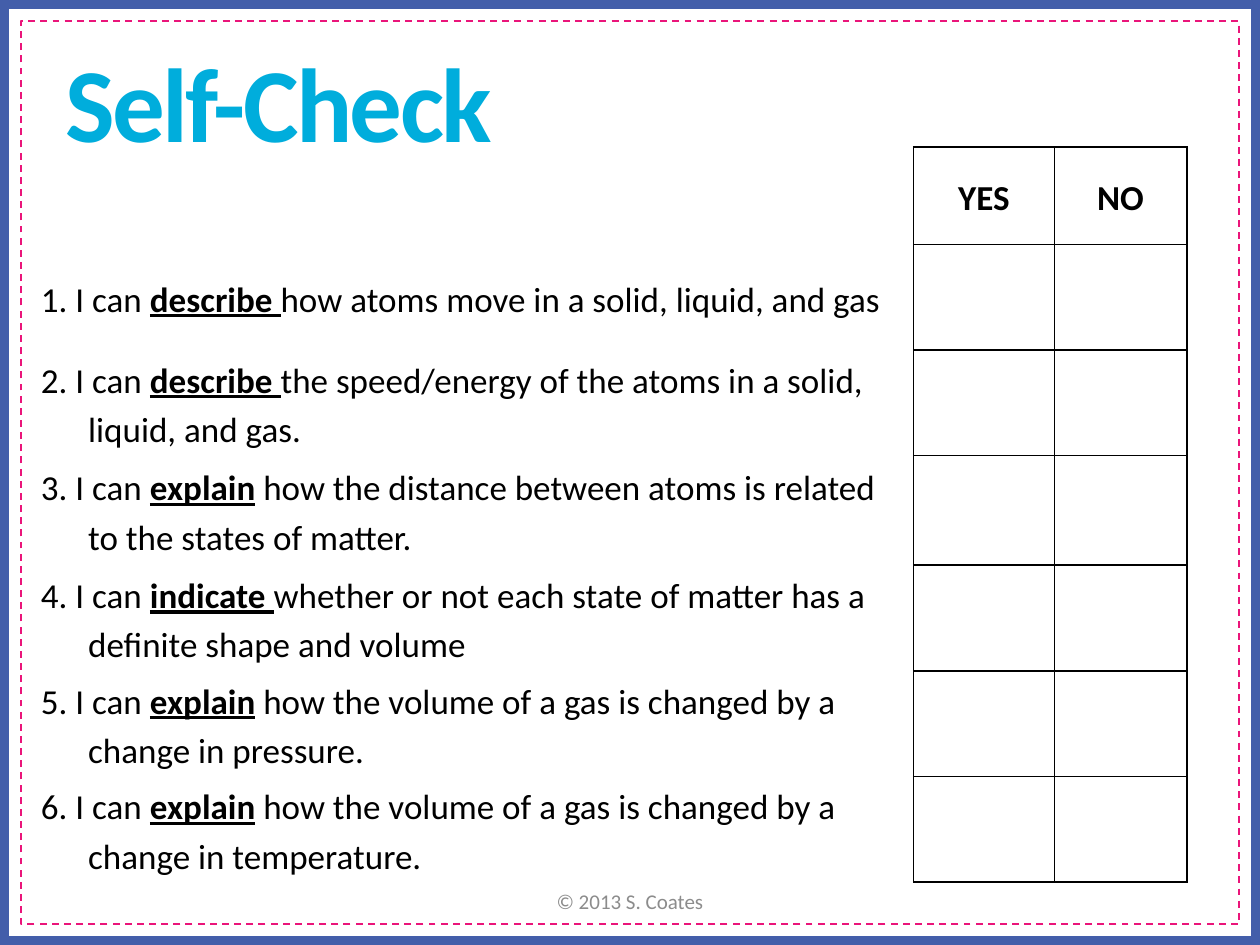
from lxml import etree
from pptx import Presentation
from pptx.dml.color import RGBColor
from pptx.enum.dml import MSO_LINE
from pptx.enum.shapes import MSO_SHAPE
from pptx.enum.text import MSO_ANCHOR, MSO_AUTO_SIZE, PP_ALIGN
from pptx.oxml.ns import qn
from pptx.util import Pt

RECTANGLE = MSO_SHAPE.RECTANGLE
DASH = MSO_LINE.DASH
TOP, MIDDLE = MSO_ANCHOR.TOP, MSO_ANCHOR.MIDDLE
LEFT, CENTER = PP_ALIGN.LEFT, PP_ALIGN.CENTER
FIT_SHAPE = MSO_AUTO_SIZE.SHAPE_TO_FIT_TEXT

BLACK = RGBColor(0, 0, 0)
BLUE = RGBColor(0x43, 0x5E, 0xAA)
PINK = RGBColor(0xEA, 0x15, 0x7A)
CYAN = RGBColor(0x00, 0xAD, 0xDC)
GRAY = RGBColor(0x8C, 0x8C, 0x8C)

TITLE = "Self-Check"
FOOTER = "© 2013 S. Coates"
ANSWERS = ["YES", "NO"]
GOALS = [
    ("describe ", "how atoms move in a solid, liquid, and gas"),
    ("describe ", "the speed/energy of the atoms in a solid, liquid, and gas."),
    ("explain", " how the distance between atoms is related to the states of matter."),
    ("indicate ", "whether or not each state of matter has a definite shape and volume"),
    ("explain", " how the volume of a gas is changed by a change in pressure."),
    ("explain", " how the volume of a gas is changed by a change in temperature."),
]

WIDTH, HEIGHT = 720, 540
FRAMES = [(0, BLUE, 10, None), (12, PINK, 1, DASH)]
TABLE_LEFT, TABLE_TOP = 18, 84
COLUMN_WIDTHS = [504, 80.5, 75.7]
ROW_HEIGHTS = [55.6, 60.4, 60.4, 62.6, 60.4, 60.4, 60.4]
HANGING_INDENT = 27

TITLE_FORMAT = {"name": "Calibri", "size": Pt(60), "bold": True}
FOOTER_FORMAT = {"name": "Calibri", "size": Pt(12)}
PLAIN = {"name": "Calibri", "size": Pt(20), "bold": False}
HEADING = {**PLAIN, "bold": True}
VERB = {**HEADING, "underline": True}
CELL_FORMAT = {
    "vertical_anchor": MIDDLE,
    "margin_left": Pt(5.4),
    "margin_right": Pt(5.4),
    "margin_top": 0,
    "margin_bottom": 0,
}


def set_attributes(target, values):
    for name, value in values.items():
        setattr(target, name, value)


def place(shape, left, top, width, height):
    set_attributes(shape, {"left": Pt(left), "top": Pt(top),
                           "width": Pt(width), "height": Pt(height)})


def add_run(paragraph, text, values, color):
    run = paragraph.add_run()
    run.text = text
    set_attributes(run.font, values)
    run.font.color.rgb = color
    return run


def add_frame(slide, inset, color, weight, dash):
    frame = slide.shapes.add_shape(RECTANGLE, Pt(inset), Pt(inset),
                                   Pt(WIDTH - 2 * inset), Pt(HEIGHT - 2 * inset))
    frame.shadow.inherit = False
    frame.fill.background()
    frame.line.color.rgb = color
    frame.line.width = Pt(weight)
    if dash is not None:
        frame.line.dash_style = dash


def set_borders(cell, visible_sides):
    properties = cell._tc.get_or_add_tcPr()
    for side in "LRTB":
        line = etree.SubElement(properties, qn(f"a:ln{side}"), w=str(Pt(1)))
        if side in visible_sides:
            fill = etree.SubElement(line, qn("a:solidFill"))
            etree.SubElement(fill, qn("a:srgbClr"), val=str(BLACK))
        else:
            etree.SubElement(line, qn("a:noFill"))


def add_checklist(slide):
    table = slide.shapes.add_table(
        len(ROW_HEIGHTS), len(COLUMN_WIDTHS), Pt(TABLE_LEFT), Pt(TABLE_TOP),
        Pt(sum(COLUMN_WIDTHS)), Pt(sum(ROW_HEIGHTS))).table
    table.first_row = False
    table.horz_banding = False
    for column, width in zip(table.columns, COLUMN_WIDTHS):
        column.width = Pt(width)
    for row, height in zip(table.rows, ROW_HEIGHTS):
        row.height = Pt(height)
        for index, cell in enumerate(row.cells):
            set_attributes(cell, CELL_FORMAT)
            set_borders(cell, "LRTB" if index else "R")
            cell.fill.background()

    for column, answer in enumerate(ANSWERS, 1):
        paragraph = table.cell(0, column).text_frame.paragraphs[0]
        set_attributes(paragraph, {"alignment": CENTER, "line_spacing": 1.15})
        add_run(paragraph, answer, HEADING, BLACK)

    for number, (verb, rest) in enumerate(GOALS, 1):
        paragraph = table.cell(number, 0).text_frame.paragraphs[0]
        paragraph.line_spacing = 1.15
        properties = paragraph._p.get_or_add_pPr()
        properties.set("marL", str(Pt(HANGING_INDENT)))
        properties.set("indent", str(-Pt(HANGING_INDENT)))
        add_run(paragraph, f"{number}. I can ", PLAIN, BLACK)
        add_run(paragraph, verb, VERB, BLACK)
        add_run(paragraph, rest, PLAIN, BLACK)


def add_title(slide):
    title = slide.shapes.title
    place(title, 30, 18, 408, 80)
    set_attributes(title.text_frame, {"vertical_anchor": TOP, "word_wrap": True,
                                      "auto_size": FIT_SHAPE})
    paragraph = title.text_frame.paragraphs[0]
    paragraph.alignment = LEFT
    run = add_run(paragraph, TITLE, TITLE_FORMAT, CYAN)
    run._r.get_or_add_rPr().set("spc", "-150")


def add_footer(slide):
    footer = slide.shapes.add_textbox(Pt(246), Pt(500.5), Pt(228), Pt(28.8))
    set_attributes(footer.text_frame, {"vertical_anchor": MIDDLE, "word_wrap": True})
    paragraph = footer.text_frame.paragraphs[0]
    paragraph.alignment = CENTER
    add_run(paragraph, FOOTER, FOOTER_FORMAT, GRAY)


def main():
    presentation = Presentation()
    set_attributes(presentation, {"slide_width": Pt(WIDTH), "slide_height": Pt(HEIGHT)})
    slide = presentation.slides.add_slide(presentation.slide_layouts[5])
    for frame in FRAMES:
        add_frame(slide, *frame)
    add_checklist(slide)
    add_title(slide)
    add_footer(slide)
    presentation.save("out.pptx")


if __name__ == "__main__":
    main()
